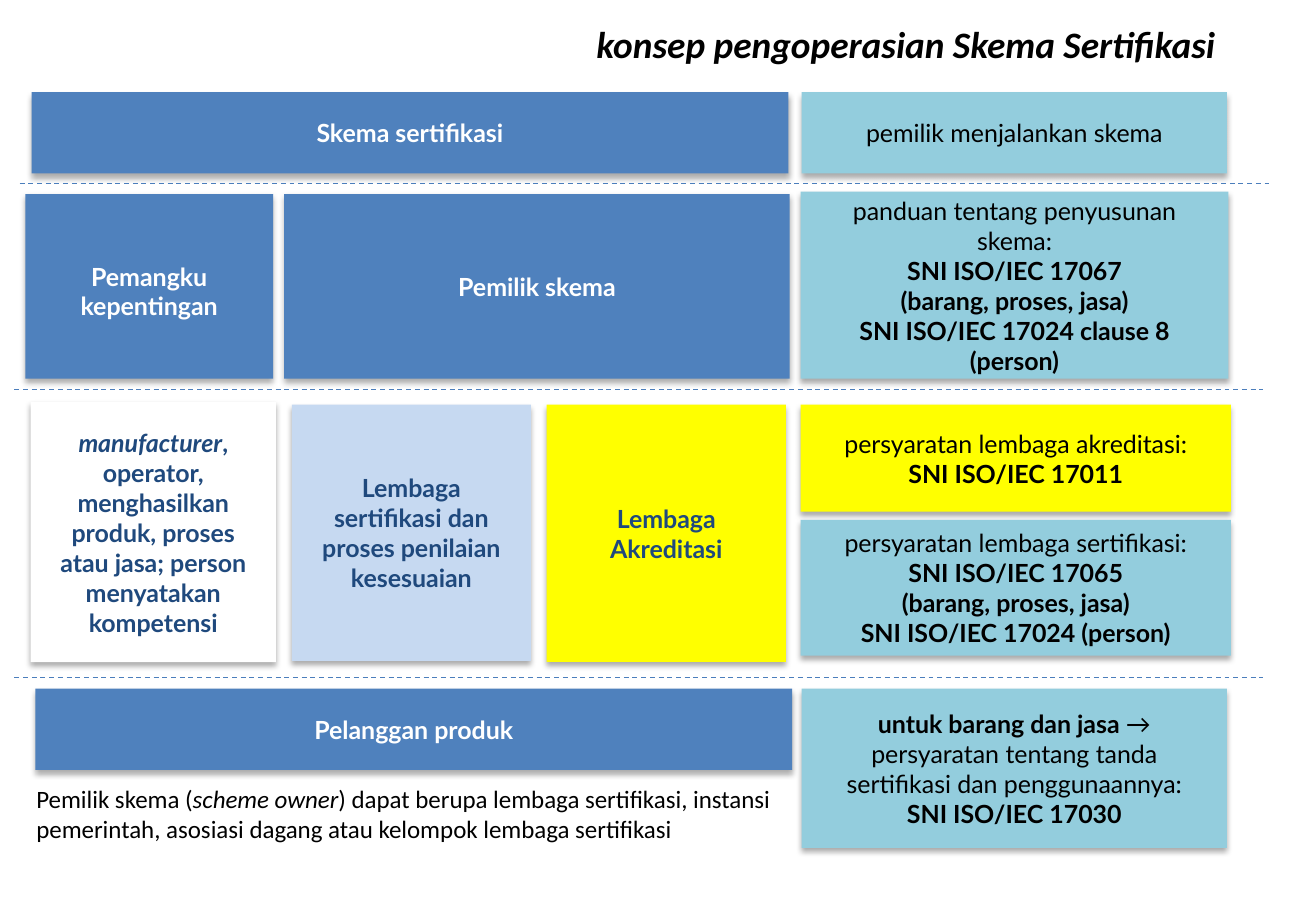
from lxml import etree
from pptx import Presentation, util as u
from pptx.dml.color import RGBColor
from pptx.enum import dml, shapes, text
from pptx.oxml import ns

BLUE, AQUA, YELLOW, PALE, WHITE = "4F81BD", "93CDDD", "FFFF00", "C6D9F1", "FFFFFF"
BLACK, NAVY, RULE = "000000", "1F497D", "4B7EBC"


def rgb(value):
    return RGBColor.from_string(value)


def run(words, **fmt):
    return words, fmt


def bold(words):
    return run(words, bold=True)


class Board:
    def __init__(self, prs):
        self.s = prs.slides.add_slide(prs.slide_layouts[6])
        self.size = 14.8
        self.inset_x, self.inset_y = u.Cm(0.3), u.Cm(0.15)

    def fill_text(self, sp, paragraphs, font, color, align, size=None, top=None):
        tf = sp.text_frame
        tf.word_wrap = True
        tf.margin_left = tf.margin_right = self.inset_x
        tf.margin_top = tf.margin_bottom = self.inset_y
        tf.vertical_anchor = text.MSO_ANCHOR.MIDDLE
        if top is not None:
            tf.vertical_anchor = text.MSO_ANCHOR.TOP
            tf.margin_top = u.Cm(top)
        for i, runs in enumerate(paragraphs):
            p = tf.paragraphs[0] if i == 0 else tf.add_paragraph()
            p.alignment = align
            for words, fmt in runs:
                r = p.add_run()
                r.text = words
                r.font.name = font
                r.font.size = u.Pt(size or self.size)
                r.font.color.rgb = rgb(color)
                r.font.bold = fmt.get("bold", False)
                r.font.italic = fmt.get("italic", False)

    def box(self, x, y, w, h, fill, color, *paragraphs, top=None):
        sp = self.s.shapes.add_shape(shapes.MSO_SHAPE.RECTANGLE,
                                     u.Cm(x), u.Cm(y), u.Cm(w), u.Cm(h))
        sp.fill.solid()
        sp.fill.fore_color.rgb = rgb(fill)
        sp.line.fill.background()
        self.shadow(sp)
        self.fill_text(sp, paragraphs, "Lato", color, text.PP_ALIGN.CENTER, top=top)

    def shadow(self, sp):
        sp.shadow.inherit = False
        effects = sp._element.spPr.find(ns.qn("a:effectLst"))
        outer = etree.SubElement(effects, ns.qn("a:outerShdw"), blurRad=str(u.Pt(3.5)),
                                 dist=str(u.Pt(2.2)), dir="5400000", rotWithShape="0")
        tint = etree.SubElement(outer, ns.qn("a:srgbClr"), val=BLACK)
        etree.SubElement(tint, ns.qn("a:alpha"), val="32000")

    def label(self, x, y, w, h, runs, align, size=None):
        sp = self.s.shapes.add_textbox(u.Cm(x), u.Cm(y), u.Cm(w), u.Cm(h))
        self.fill_text(sp, [runs], "Calibri", BLACK, align, size, top=0.15)

    def divider(self, x, y, w):
        line = self.s.shapes.add_connector(shapes.MSO_CONNECTOR.STRAIGHT,
                                           u.Cm(x), u.Cm(y), u.Cm(x + w), u.Cm(y))
        line.line.color.rgb = rgb(RULE)
        line.line.width = u.Pt(0.75)
        line.line.dash_style = dml.MSO_LINE.DASH
        etree.SubElement(line._element.spPr, ns.qn("a:effectLst"))


def main():
    prs = Presentation()
    prs.slide_width, prs.slide_height = u.Cm(27.51), u.Cm(19.05)
    b = Board(prs)

    b.label(5.94, 0.3, 19.76, 1.2,
            [run("konsep pengoperasian Skema Sertifikasi", bold=True, italic=True)],
            text.PP_ALIGN.RIGHT, 22.1)

    b.box(0.66, 1.93, 15.82, 1.7, BLUE, WHITE, [bold("Skema sertifikasi")])
    b.box(16.76, 1.93, 8.89, 1.7, AQUA, BLACK, [run("pemilik menjalankan skema")])

    b.box(0.53, 4.06, 5.18, 3.86, BLUE, WHITE, [bold("Pemangku kepentingan")], top=1.4)
    b.box(5.94, 4.06, 10.57, 3.86, BLUE, WHITE, [bold("Pemilik skema")])
    b.box(16.74, 4.01, 8.94, 3.91, AQUA, BLACK,
          [run("panduan tentang penyusunan skema:")],
          [bold("SNI ISO/IEC 17067")],
          [bold("(barang, proses, jasa)")],
          [bold("SNI ISO/IEC 17024 clause 8 (person)")])

    b.box(0.64, 8.41, 5.13, 5.44, WHITE, NAVY,
          [run("manufacturer", bold=True, italic=True),
           bold(", operator, menghasilkan produk, proses atau jasa; "
                "person menyatakan kompetensi")])
    b.box(6.1, 8.46, 5, 5.36, PALE, NAVY,
          [bold("Lembaga sertifikasi dan proses penilaian kesesuaian")])
    b.box(11.43, 8.46, 5, 5.38, YELLOW, NAVY, [bold("Lembaga Akreditasi")])
    b.box(16.74, 8.46, 8.99, 2.24, YELLOW, BLACK,
          [run("persyaratan lembaga akreditasi:")],
          [bold("SNI ISO/IEC 17011")])
    b.box(16.74, 10.87, 8.99, 2.84, AQUA, BLACK,
          [run("persyaratan lembaga sertifikasi:")],
          [bold("SNI ISO/IEC 17065")],
          [bold("(barang, proses, jasa)")],
          [bold("SNI ISO/IEC 17024 (person)")])

    b.box(0.74, 14.4, 15.82, 1.7, BLUE, WHITE, [bold("Pelanggan produk")])
    b.box(16.76, 14.4, 8.89, 3.33, AQUA, BLACK,
          [bold("untuk barang dan jasa "),
           run("→ persyaratan tentang tanda sertifikasi dan penggunaannya:")],
          [bold("SNI ISO/IEC 17030")])
    b.label(0.46, 16.23, 16.1, 1.4,
            [run("Pemilik skema ("), run("scheme owner", italic=True),
             run(") dapat berupa lembaga sertifikasi, instansi pemerintah, "
                 "asosiasi dagang atau kelompok lembaga sertifikasi")],
            text.PP_ALIGN.LEFT)

    for x, y in ((0.41, 3.84), (0.3, 8.15), (0.3, 14.17)):
        b.divider(x, y, 26.11)

    prs.save("out.pptx")


if __name__ == "__main__":
    main()
